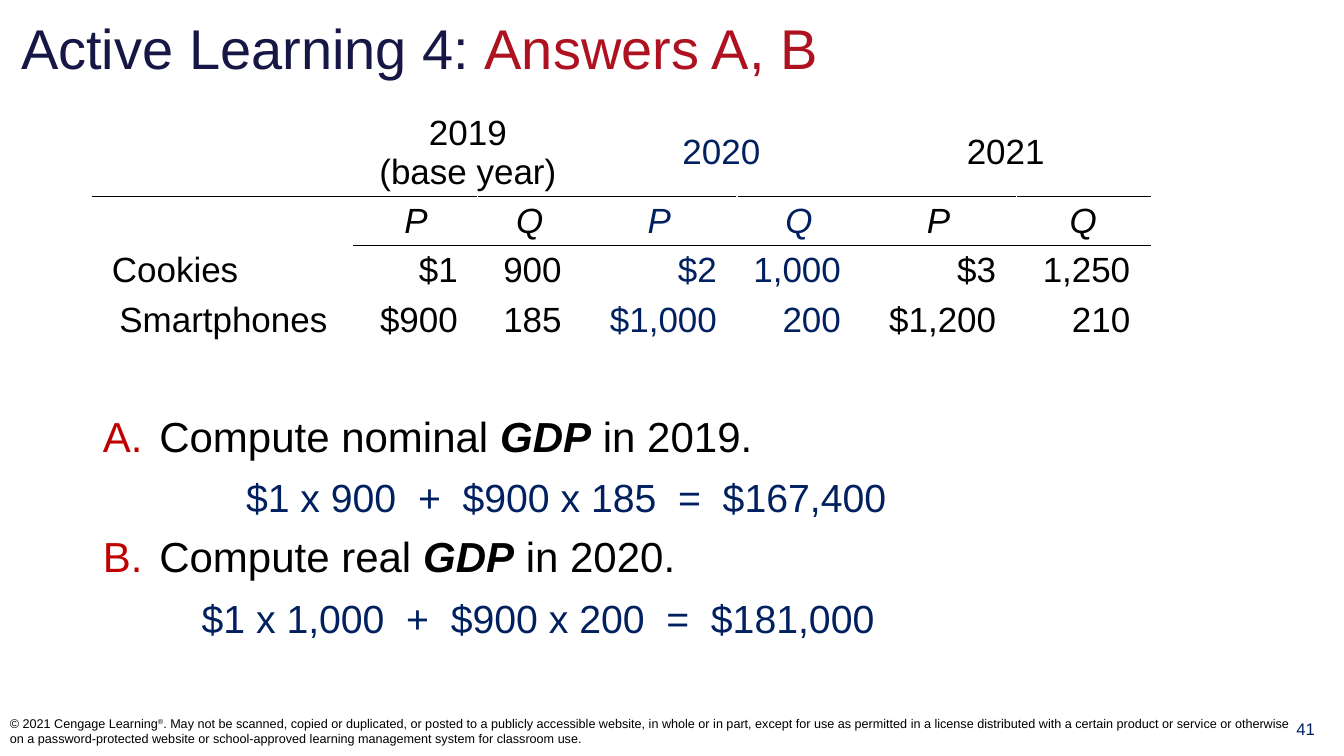
from lxml.etree import SubElement
from pptx import Presentation
from pptx.dml.color import RGBColor
from pptx.enum.text import MSO_ANCHOR, MSO_AUTO_SIZE, PP_ALIGN
from pptx.oxml import parse_xml
from pptx.oxml.ns import nsdecls, qn
from pptx.util import Inches, Pt

BLACK = RGBColor(0x00, 0x00, 0x00)
NAVY = RGBColor(0x00, 0x20, 0x60)
INDIGO = RGBColor(0x17, 0x17, 0x45)
CRIMSON = RGBColor(0xAE, 0x12, 0x21)
RED = RGBColor(0xC0, 0x00, 0x00)

# Content
TITLE = [("Active Learning 4: ", INDIGO), ("Answers A, B", CRIMSON)]
YEARS = [(("2019", "(base year)"), BLACK), (("2020",), NAVY), (("2021",), BLACK)]
GOODS = [
    ("Cookies", "$1", "900", "$2", "1,000", "$3", "1,250"),
    ("Smartphones", "$900", "185", "$1,000", "200", "$1,200", "210"),
]
# Number, question before and after the bold term, answer, answer indent
QUESTIONS = [
    (1, "Compute nominal ", " in 2019.", "$1 x 900  +  $900 x 185  =  $167,400", 1.42),
    (2, "Compute real ", " in 2020.", "$1 x 1,000  +  $900 x 200  =  $181,000", 0.98),
]
TERM = "GDP"
PAGE = "41"
COPYRIGHT = [
    ("© 2021 Cengage Learning", False),
    ("®", True),
    (". May not be scanned, copied or duplicated, or posted to a publicly accessible "
     "website, in whole or in part, except for use as permitted in a license distributed "
     "with a certain product or service or otherwise on a password-protected website or "
     "school-approved learning management system for classroom use.", False),
]

# Layout
LEFT, WIDTH = 0.92, 10.48
COL_WIDTHS = [2.59, 1.23, 1.03, 1.54, 1.23, 1.54, 1.33]
ROW_HEIGHTS = [0.87, 0.49, 0.49, 0.49]


def add_run(p, text, size, color, bold=False, italic=False):
    r = p.add_run()
    r.text = text
    r.font.name, r.font.size = "Arial", Pt(size)
    r.font.bold, r.font.italic = bold, italic
    r.font.color.rgb = color
    return r


def place(sp, left, top, width, height):
    sp.left, sp.top = Inches(left), Inches(top)
    sp.width, sp.height = Inches(width), Inches(height)


def add_text_box(s, left, top, width, height):
    tf = s.shapes.add_textbox(*map(Inches, (left, top, width, height))).text_frame
    tf.word_wrap = True
    return tf


def fill_cell(cell, lines, color, align, italic=False):
    tf = cell.text_frame
    for i, line in enumerate(lines):
        p = tf.add_paragraph() if i else tf.paragraphs[0]
        p.alignment = align
        add_run(p, line, 25, color, italic=italic)


def rule(cell, side):
    line = parse_xml(
        f'<a:{side} {nsdecls("a")} w="12700"><a:solidFill>'
        f'<a:srgbClr val="{BLACK}"/></a:solidFill></a:{side}>')
    cell.fill.background()
    tc_pr = cell._tc.get_or_add_tcPr()
    tc_pr.insert(len(tc_pr.findall(qn("a:lnT"))), line)


prs = Presentation()
prs.slide_width, prs.slide_height = Inches(13.33), Inches(7.5)
s = prs.slides.add_slide(prs.slide_layouts[1])

# Title
title = s.shapes.title
place(title, 0.11, 0.11, 13, 0.72)
tf = title.text_frame
tf.auto_size, tf.vertical_anchor = MSO_AUTO_SIZE.NONE, MSO_ANCHOR.MIDDLE
p = tf.paragraphs[0]
p.alignment = PP_ALIGN.LEFT
for text, color in TITLE:
    add_run(p, text, 40, color)

# Price and quantity table
frame = s.shapes.add_table(len(ROW_HEIGHTS), len(COL_WIDTHS), Inches(LEFT),
                           Inches(1.08), Inches(WIDTH), Inches(sum(ROW_HEIGHTS)))
table = frame.table
table.first_row = table.horz_banding = False
for col, width in zip(table.columns, COL_WIDTHS):
    col.width = Inches(width)
for row, height in zip(table.rows, ROW_HEIGHTS):
    row.height = Inches(height)
for cell in table.iter_cells():
    cell.fill.background()
    cell.vertical_anchor = MSO_ANCHOR.MIDDLE
    cell.margin_top = cell.margin_bottom = Inches(0.04)

for i, (lines, color) in enumerate(YEARS):
    c = 1 + 2 * i
    table.cell(0, c).merge(table.cell(0, c + 1))
    fill_cell(table.cell(0, c), lines, color, PP_ALIGN.CENTER)
    for k, symbol in enumerate("PQ"):
        fill_cell(table.cell(1, c + k), [symbol], color, PP_ALIGN.CENTER, italic=True)
        for r, good in enumerate(GOODS, start=2):
            cell = table.cell(r, c + k)
            cell.margin_left, cell.margin_right = Inches(0.05), Inches(0.2)
            fill_cell(cell, [good[c + k]], color, PP_ALIGN.RIGHT)

for r, align in ((2, PP_ALIGN.LEFT), (3, PP_ALIGN.CENTER)):
    fill_cell(table.cell(r, 0), [GOODS[r - 2][0]], BLACK, align)
table.cell(2, 0).margin_left = Inches(0.19)

# Rules under the header (full width) and under P, Q (without the first column)
for upper, first in ((0, 0), (1, 1)):
    for c in range(first, len(COL_WIDTHS)):
        rule(table.cell(upper, c), "lnB")
        rule(table.cell(upper + 1, c), "lnT")

# Questions and answers
body = s.placeholders[1]
place(body, LEFT, 4, WIDTH, 3)
tf = body.text_frame
tf.auto_size, tf.margin_top = MSO_AUTO_SIZE.NONE, Inches(0.07)
for number, before, after, answer, indent in QUESTIONS:
    p = tf.paragraphs[0] if number == 1 else tf.add_paragraph()
    p.space_before = Pt(0 if number == 1 else 7.5)
    p_pr = p._p.get_or_add_pPr()
    p_pr.set("marL", str(Inches(0.56)))
    p_pr.set("indent", str(-Inches(0.56)))
    SubElement(SubElement(p_pr, qn("a:buClr")), qn("a:srgbClr")).set("val", str(RED))
    bullet = SubElement(p_pr, qn("a:buAutoNum"))
    bullet.set("type", "alphaUcPeriod")
    bullet.set("startAt", str(number))
    add_run(p, before, 30, BLACK)
    add_run(p, TERM, 30, BLACK, bold=True, italic=True)
    add_run(p, after, 30, BLACK)

    p = tf.add_paragraph()
    p.level, p.space_before = 1, Pt(9)
    p_pr = p._p.get_or_add_pPr()
    p_pr.set("marL", str(Inches(indent)))
    p_pr.set("indent", "0")
    SubElement(p_pr, qn("a:buNone"))
    add_run(p, answer, 28, NAVY)

# Footer: copyright line and page number
tf = add_text_box(s, 0, 7, 12.92, 0.5)
tf.vertical_anchor = MSO_ANCHOR.MIDDLE
for text, raised in COPYRIGHT:
    r = add_run(tf.paragraphs[0], text, 9, BLACK)
    if raised:
        r.font._element.set("baseline", "30000")

p = add_text_box(s, 12.57, 7.08, 0.76, 0.41).paragraphs[0]
p.alignment = PP_ALIGN.CENTER
add_run(p, PAGE, 12, NAVY)

prs.save("out.pptx")
